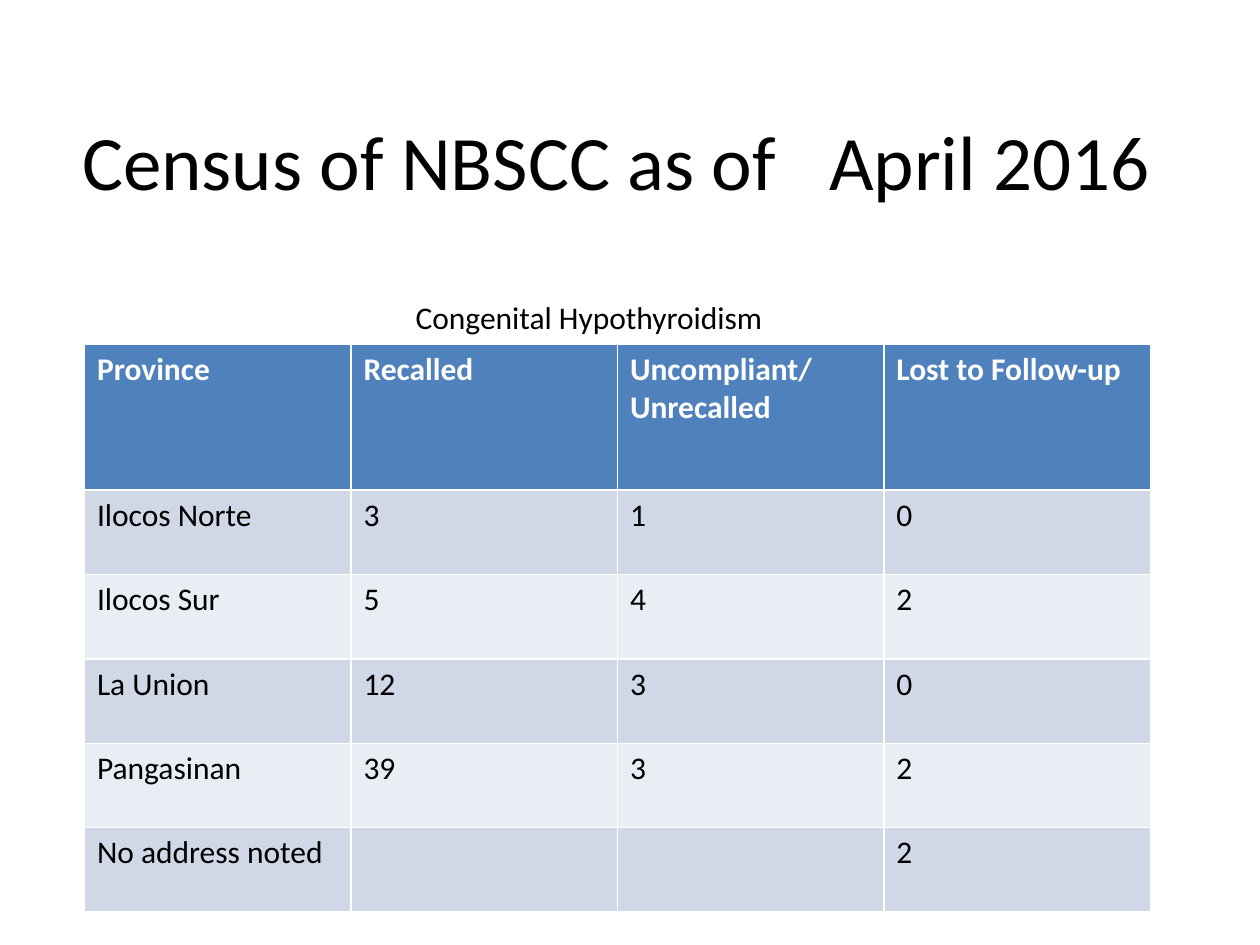
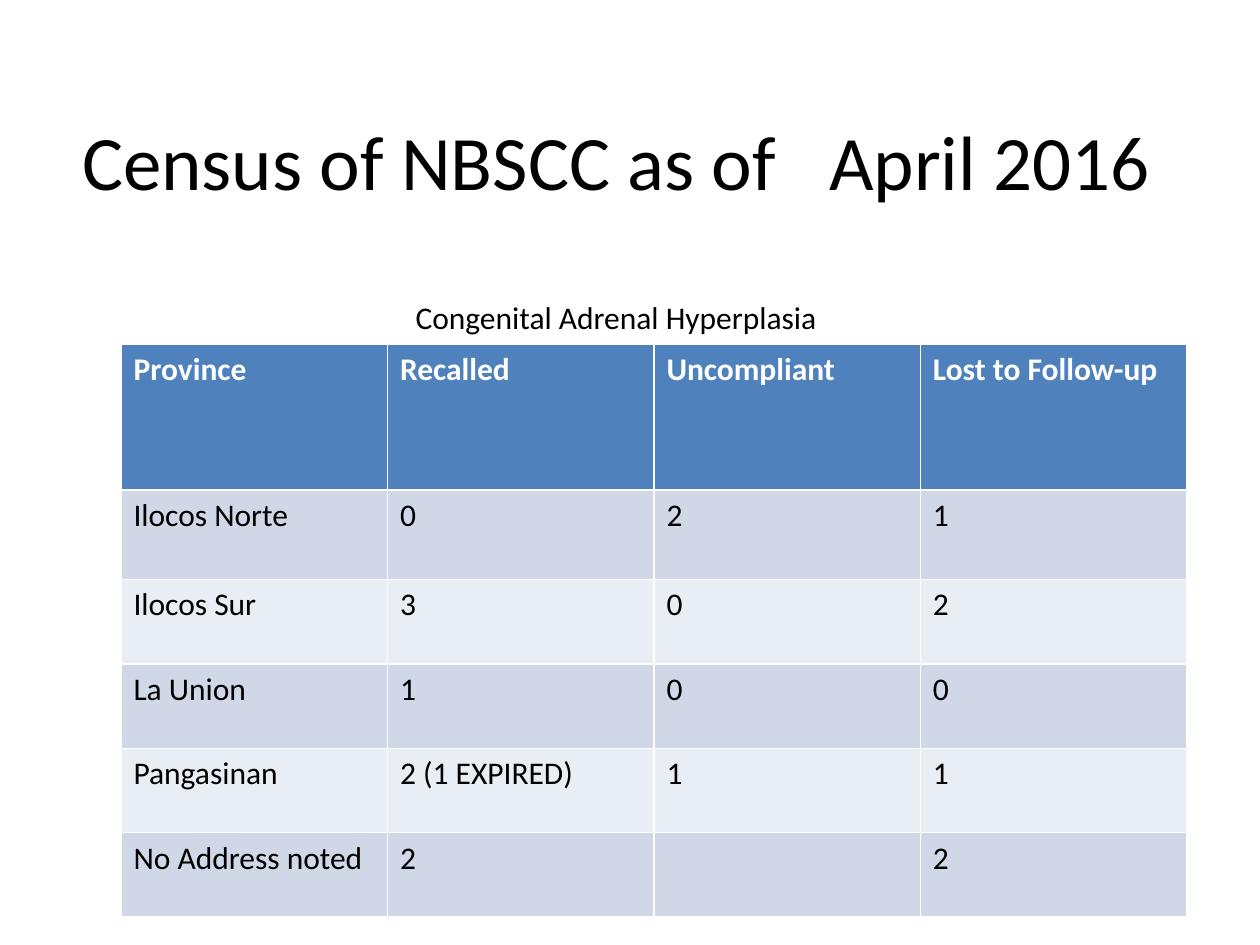
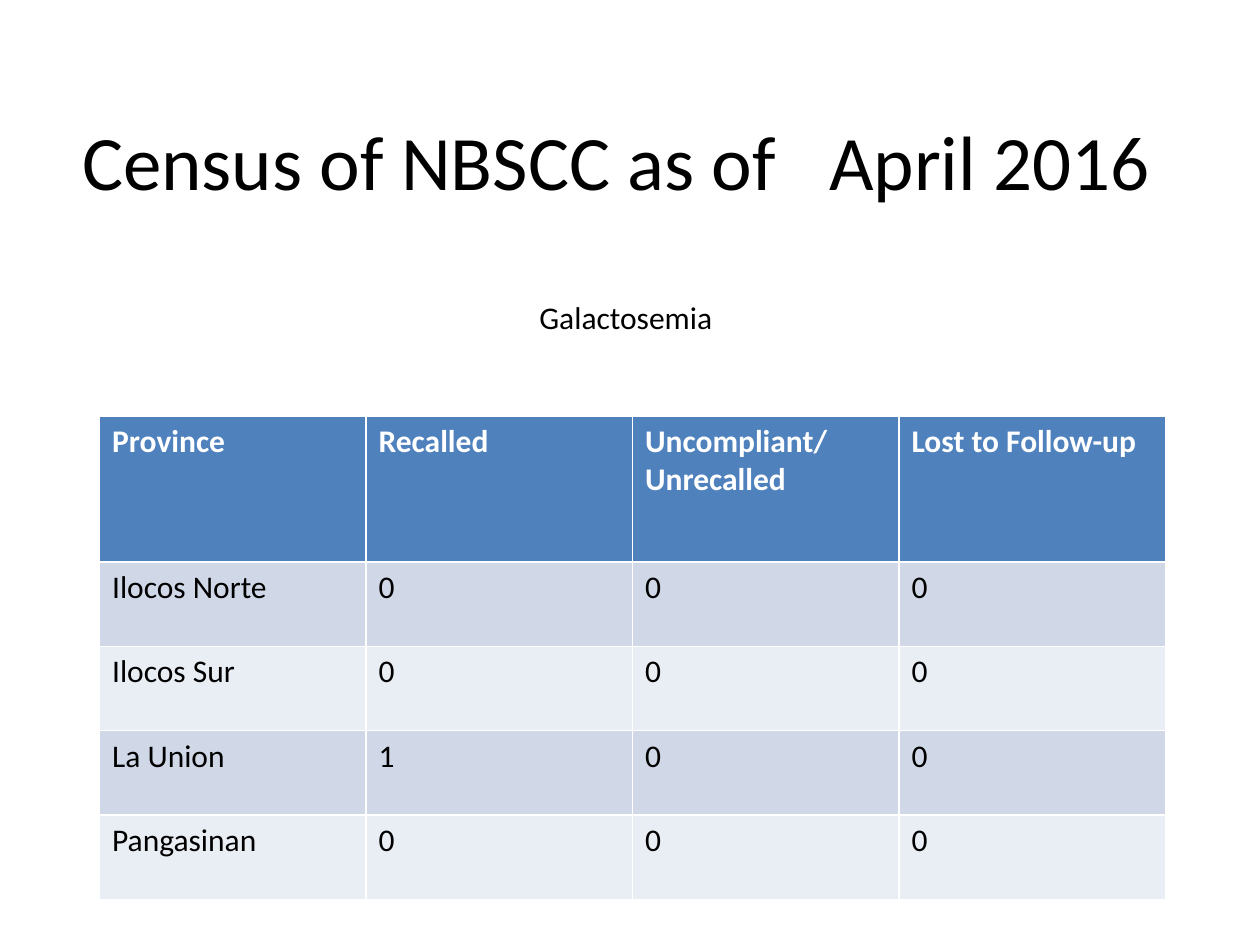
from pptx import Presentation
from pptx import util as u
from pptx.dml.color import RGBColor
from pptx.enum import text

FONT = "Calibri"
BLACK = RGBColor(0x00, 0x00, 0x00)
WHITE = RGBColor(0xFF, 0xFF, 0xFF)
HEADER_BLUE = RGBColor(0x4F, 0x81, 0xBD)
BAND_DARK = RGBColor(0xD0, 0xD8, 0xE8)
BAND_LIGHT = RGBColor(0xE9, 0xED, 0xF4)

TITLE_BOX = (0.53, 0.5, 8.72, 1.53)
TITLE_GAP = 19.8
TABLE_WIDTH = 8.46
HEADER_HEIGHT = 1.16
ROW_HEIGHT = 0.67

CENSUSES = [
    {
        "condition": "Congenital Hypothyroidism",
        "caption_box": (3.2, 2.32, 3.59, 0.4),
        "caption_align": text.PP_ALIGN.LEFT,
        "table_corner": (0.67, 2.73),
        "first_row_height": ROW_HEIGHT,
        "rows": [
            ("Province", "Recalled", "Uncompliant/ Unrecalled", "Lost to Follow-up"),
            ("Ilocos Norte", "3", "1", "0"),
            ("Ilocos Sur", "5", "4", "2"),
            ("La Union", "12", "3", "0"),
            ("Pangasinan", "39", "3", "2"),
            ("No address noted", "", "", "2"),
        ],
    },
    {
        "condition": "Congenital Adrenal Hyperplasia",
        "caption_box": (3.2, 2.32, 4.1, 0.4),
        "caption_align": text.PP_ALIGN.LEFT,
        "table_corner": (0.96, 2.73),
        "first_row_height": 0.71,
        "rows": [
            ("Province", "Recalled", "Uncompliant", "Lost to Follow-up"),
            ("Ilocos Norte", "0", "2", "1"),
            ("Ilocos Sur", "3", "0", "2"),
            ("La Union", "1", "0", "0"),
            ("Pangasinan", "2 (1 EXPIRED)", "1", "1"),
            ("No Address noted", "2", "", "2"),
        ],
    },
    {
        "condition": "Galactosemia ",
        "caption_box": (3.2, 2.32, 3.59, 0.4),
        "caption_align": text.PP_ALIGN.CENTER,
        "table_corner": (0.79, 3.3),
        "first_row_height": ROW_HEIGHT,
        "rows": [
            ("Province", "Recalled", "Uncompliant/ Unrecalled", "Lost to Follow-up"),
            ("Ilocos Norte", "0", "0", "0"),
            ("Ilocos Sur", "0", "0", "0"),
            ("La Union", "1", "0", "0"),
            ("Pangasinan", "0", "0", "0"),
        ],
    },
]


def add_run(paragraph, words, size=18, color=BLACK, bold=False):
    run = paragraph.add_run()
    run.text = words
    run.font.name = FONT
    run.font.size = u.Pt(size)
    run.font.bold = bold
    run.font.color.rgb = color
    return run


def add_title(slide, box):
    title = slide.shapes.title
    title.left, title.top, title.width, title.height = map(u.Inches, box)
    title.text_frame.vertical_anchor = text.MSO_ANCHOR.MIDDLE
    heading = title.text_frame.paragraphs[0]
    heading.alignment = text.PP_ALIGN.CENTER
    add_run(heading, "Census of NBSCC as of", 44)
    gap = add_run(heading, " ", 44)
    gap.font._element.set("spc", str(round(TITLE_GAP * 100)))
    add_run(heading, "April 2016", 44)


def add_census_table(slide, corner, rows, first_row_height):
    heights = [HEADER_HEIGHT, first_row_height] + [ROW_HEIGHT] * (len(rows) - 2)
    left, top = corner
    census = slide.shapes.add_table(
        len(rows), len(rows[0]),
        u.Inches(left), u.Inches(top),
        u.Inches(TABLE_WIDTH), u.Inches(sum(heights)),
    ).table
    for row_index, (entries, height) in enumerate(zip(rows, heights)):
        census.rows[row_index].height = u.Inches(height)
        is_header = row_index == 0
        band = BAND_DARK if row_index % 2 else BAND_LIGHT
        for column_index, entry in enumerate(entries):
            cell = census.cell(row_index, column_index)
            cell.fill.solid()
            cell.fill.fore_color.rgb = HEADER_BLUE if is_header else band
            if entry:
                add_run(cell.text_frame.paragraphs[0], entry,
                        color=WHITE if is_header else BLACK, bold=is_header)


def add_caption(slide, box, condition, alignment):
    caption = slide.shapes.add_textbox(*map(u.Inches, box)).text_frame
    caption.word_wrap = True
    caption.auto_size = text.MSO_AUTO_SIZE.SHAPE_TO_FIT_TEXT
    caption.paragraphs[0].alignment = alignment
    add_run(caption.paragraphs[0], condition)


def add_census_slide(deck, census):
    slide = deck.slides.add_slide(deck.slide_layouts.get_by_name("Title Only"))
    add_title(slide, TITLE_BOX)
    add_census_table(slide, census["table_corner"], census["rows"],
                     census["first_row_height"])
    add_caption(slide, census["caption_box"], census["condition"],
                census["caption_align"])


def main():
    deck = Presentation()
    deck.slide_width = u.Inches(10)
    deck.slide_height = u.Inches(7.5)
    for census in CENSUSES:
        add_census_slide(deck, census)
    deck.save("out.pptx")


if __name__ == "__main__":
    main()
